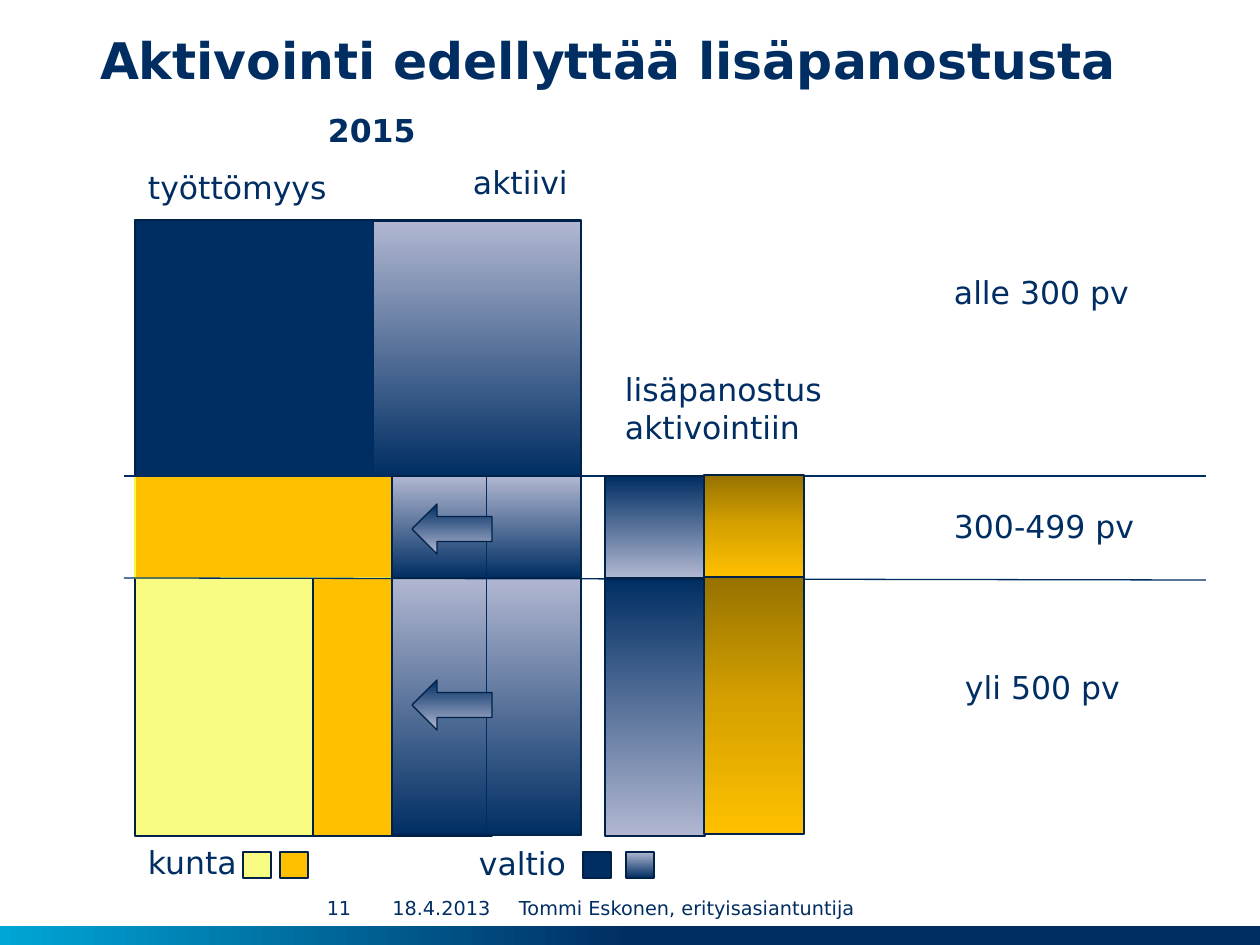
import copy

import pptx
import pptx.dml.color
import pptx.enum.shapes
import pptx.enum.text
import pptx.oxml.ns
import pptx.util

RGB = pptx.dml.color.RGBColor
SHAPE = pptx.enum.shapes.MSO_SHAPE
ALIGN = pptx.enum.text.PP_ALIGN
ANCHOR = pptx.enum.text.MSO_ANCHOR
SIZING = pptx.enum.text.MSO_AUTO_SIZE

FONT = "DejaVu Sans"
NAVY = RGB(0x00, 0x2E, 0x63)
EDGE = RGB(0x00, 0x22, 0x49)
RULE = RGB(0x00, 0x2D, 0x61)
PALE = RGB(0xB1, 0xB7, 0xD1)
CYAN = RGB(0x00, 0xA6, 0xD6)
LEMON = RGB(0xF8, 0xFC, 0x83)
LIME = RGB(0xF5, 0xFA, 0x45)
GOLD = RGB(0xFF, 0xC0, 0x00)
AMBER = RGB(0xD7, 0xA2, 0x00)
BROWN = RGB(0x97, 0x72, 0x00)

RISE = (90, [(0, NAVY), (1, PALE)])
FALL = (270, [(0, NAVY), (1, PALE)])
EXTRA = (270, [(0, BROWN), (0.5, AMBER), (1, GOLD)])
STRIPE = (180, [(0.5, NAVY), (1, CYAN)])


def px(count):
    return pptx.util.Emu(round(count * 914400 / 126))


def write(frame, words, size=18, bold=False, align=ALIGN.LEFT,
          anchor=ANCHOR.TOP, inset=(13, 6), wrap=False, fit=SIZING.NONE):
    frame.text = words
    frame.auto_size = fit
    frame.word_wrap = wrap
    frame.vertical_anchor = anchor
    frame.margin_left = frame.margin_right = px(inset[0])
    frame.margin_top = frame.margin_bottom = px(inset[1])
    for para in frame.paragraphs:
        para.alignment = align
        para.font.name = FONT
        para.font.size = pptx.util.Pt(size)
        para.font.bold = bold
        para.font.color.rgb = NAVY


class Deck:
    def __init__(self):
        self.file = pptx.Presentation()
        self.file.slide_width = px(1260)
        self.file.slide_height = px(945)
        self.slide = self.file.slides.add_slide(self.file.slide_layouts[5])

    def title(self, box, words):
        head = self.slide.shapes.title
        head.left, head.top, head.width, head.height = map(px, box)
        write(head.text_frame, words, size=28.8, bold=True,
              anchor=ANCHOR.BOTTOM, inset=(0, 6), wrap=True)

    def label(self, box, words, **style):
        shape = self.slide.shapes.add_textbox(*map(px, box))
        write(shape.text_frame, words, **style)

    def blend(self, shape, angle, stops):
        shape.fill.gradient()
        shape.fill.gradient_angle = angle
        found = shape._element.spPr.find(".//" + pptx.oxml.ns.qn("a:gsLst"))
        for _ in stops[2:]:
            found.append(copy.deepcopy(found[-1]))
        for stop, (place, color) in zip(shape.fill.gradient_stops, stops):
            stop.position = place
            stop.color.rgb = color

    def block(self, box, fill, line=EDGE, width=0.75, kind=SHAPE.RECTANGLE, turn=0):
        shape = self.slide.shapes.add_shape(kind, *map(px, box))
        shape.shadow.inherit = False
        shape.rotation = turn
        if isinstance(fill, tuple) and not isinstance(fill, RGB):
            self.blend(shape, *fill)
        else:
            shape.fill.solid()
            shape.fill.fore_color.rgb = fill
        if line is None:
            shape.line.fill.background()
        else:
            shape.line.color.rgb = line
            shape.line.width = pptx.util.Pt(width)
        return shape

    def rule(self, *ends):
        line = self.slide.shapes.add_connector(
            pptx.enum.shapes.MSO_CONNECTOR.STRAIGHT, *map(px, ends))
        line.line.color.rgb = RULE
        line.line.width = pptx.util.Pt(0.75)
        props = line._element.spPr
        props.append(props.makeelement(pptx.oxml.ns.qn("a:effectLst"), {}))
        return line


def main():
    deck = Deck()
    deck.title((100, 11, 1072, 85), "Aktivointi edellyttää lisäpanostusta")
    deck.block((0, 926, 1260, 20), STRIPE, line=None)
    for left, width, words, align in (
            (312, 54, "11", ALIGN.CENTER),
            (379, 125, "18.4.2013", ALIGN.CENTER),
            (519, 427, "Tommi Eskonen, erityisasiantuntija", ALIGN.LEFT)):
        deck.label((left, 889, width, 37), words, size=11, align=align,
                   anchor=ANCHOR.MIDDLE, inset=(0, 0), wrap=True)

    left, top, mid, low = 135, 220, 476, 578
    deck.block((left, top, 446, 615), NAVY)
    deck.block((left, low, 179, 258), LEMON)
    deck.block((313, low, 179, 258), GOLD)
    deck.block((373, 221, 208, 255), RISE)
    deck.rule(373, 222, 373, mid)
    base = deck.block((392, low, 189, 257), RISE)
    deck.block((left, mid, 348, 102), GOLD, line=LIME, width=1)
    deck.rule(124, mid, 1206, mid)
    deck.rule(124, low, 1206, 580)

    deck.block((605, 579, 100, 257), FALL)
    deck.block((605, mid, 100, 102), FALL)
    deck.block((704, 475, 100, 102), EXTRA)
    deck.block((704, 577, 100, 257), EXTRA)
    band = deck.block((392, mid, 189, 102), RISE)

    split = deck.rule(486, mid, 486, 835)
    split.begin_connect(band, 0)
    split.end_connect(base, 2)
    for y in (680, 504):
        deck.block((412, y, 80, 50), RISE, kind=SHAPE.RIGHT_ARROW, turn=180)

    for x, fill in ((243, LEMON), (280, GOLD), (583, NAVY), (626, RISE)):
        deck.block((x, 852, 28, 26), fill)

    for x, y, width, words in (
            (941, 267, 207, "alle 300 pv"),
            (941, 501, 212, "300-499 pv"),
            (952, 662, 184, "yli 500 pv"),
            (460, 157, 121, "aktiivi"),
            (135, 162, 205, "työttömyys"),
            (466, 838, 120, "valtio"),
            (135, 837, 118, "kunta")):
        deck.label((x, y, width, 50), words, fit=SIZING.SHAPE_TO_FIT_TEXT)
    deck.label((315, 105, 116, 50), "2015", bold=True, fit=SIZING.SHAPE_TO_FIT_TEXT)
    deck.label((612, 364, 223, 89), "lisäpanostus\naktivointiin",
               fit=SIZING.SHAPE_TO_FIT_TEXT)
    deck.file.save("out.pptx")


if __name__ == "__main__":
    main()
